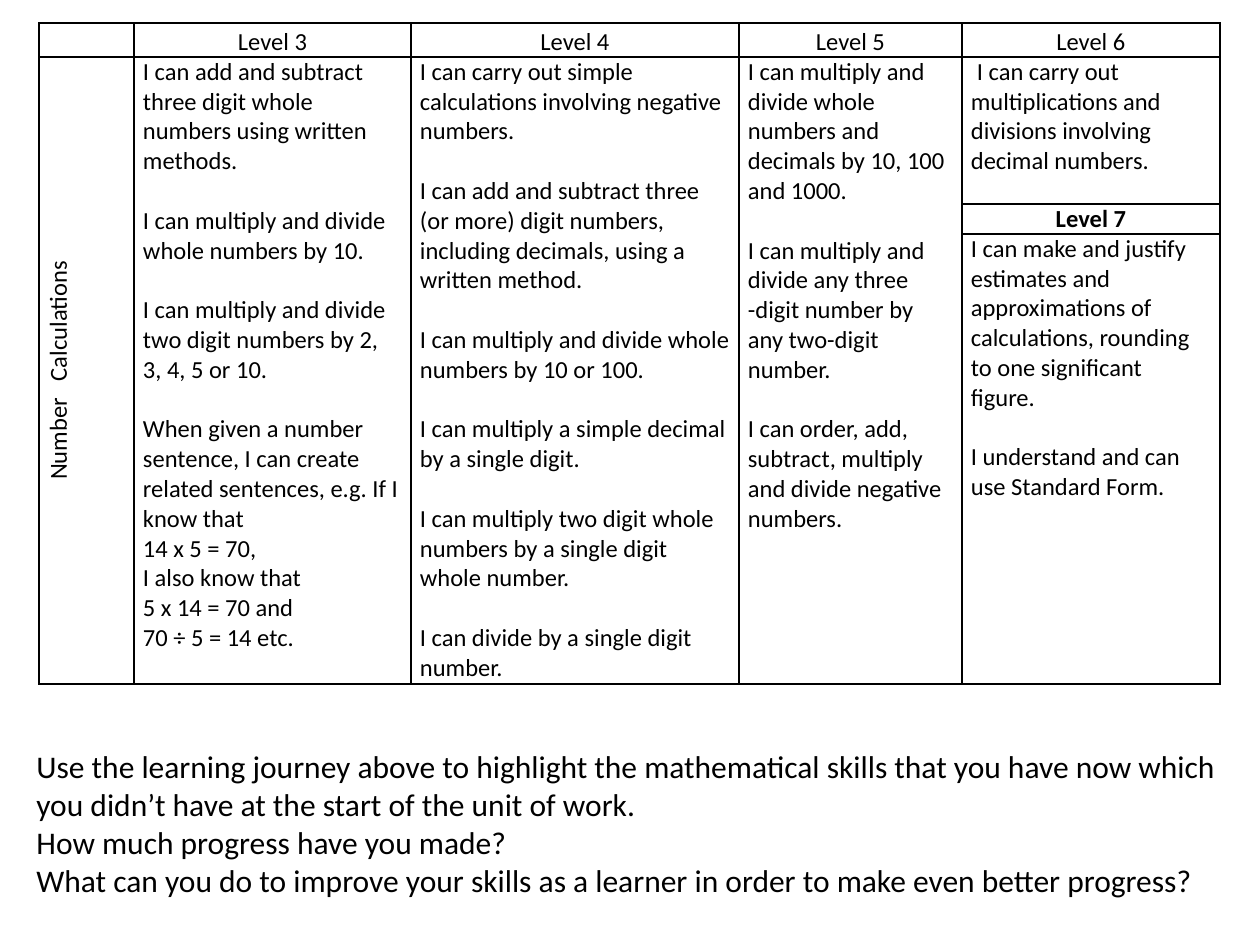
from lxml.etree import SubElement
from pptx import Presentation
from pptx.dml.color import RGBColor
from pptx.enum.text import MSO_AUTO_SIZE, PP_ALIGN
from pptx.oxml.ns import qn
from pptx.util import Emu, Pt

COLORS = {"ink": "000000"}
FONT = "Calibri"
COLS = [95, 277, 328, 223, 258]
ROWS = [34, 147, 30, 450]
LEVEL_3 = [
    ["I can add and subtract three digit whole numbers using written methods."],
    ["I can multiply and divide whole numbers by 10."],
    ["I can multiply and divide two digit numbers by 2, 3, 4, 5 or 10."],
    ["When given a number sentence, I can create related sentences, e.g. If I know that",
     "14 x 5 = 70,", "I also know that", "5 x 14 = 70 and", "70 ÷ 5 = 14 etc."],
]
LEVEL_4 = [
    ["I can carry out simple calculations involving negative numbers."],
    ["I can add and subtract three (or more) digit numbers, including decimals, "
     "using a written method."],
    ["I can multiply and divide whole numbers by 10 or 100."],
    ["I can multiply a simple decimal by a single digit."],
    ["I can multiply two digit whole numbers by a single digit whole number."],
    ["I can divide by a single digit number."],
]
LEVEL_5 = [
    ["I can multiply and divide whole numbers and decimals by 10, 100 and 1000."],
    ["I can multiply and divide any three -digit number by any two-digit number."],
    ["I can order, add, subtract, multiply and divide negative numbers."],
]
LEVEL_6 = [["I can carry out multiplications and divisions involving decimal numbers."]]
LEVEL_7 = [
    ["I can make and justify estimates and approximations of calculations, "
     "rounding to one significant figure."],
    ["I understand and can use Standard Form."],
]
PROMPTS = [
    "Use the learning journey above to highlight the mathematical skills that you have "
    "now which you didn’t have at the start of the unit of work.",
    "How much progress have you made?",
    "What can you do to improve your skills as a learner in order to make even better progress?",
]


def px(n):
    return Emu(round(n * 914400 / 126))


def add_run(p, text, size=14, bold=False):
    r = p.add_run()
    r.text = text
    r.font.name = FONT
    r.font.size = Pt(size)
    r.font.bold = bold
    r.font.color.rgb = RGBColor.from_string(COLORS["ink"])
    return r


def next_paragraph(tf, i):
    return tf.add_paragraph() if i else tf.paragraphs[0]


def format_cell(cell):
    cell.margin_left = cell.margin_right = px(9)
    cell.margin_top = cell.margin_bottom = 0
    tc_pr = cell._tc.get_or_add_tcPr()
    for side in ("lnL", "lnR", "lnT", "lnB"):
        ln = SubElement(tc_pr, qn(f"a:{side}"), w=str(Pt(1)))
        fill = SubElement(ln, qn("a:solidFill"))
        SubElement(fill, qn("a:srgbClr"), val=COLORS["ink"])
    cell.fill.background()
    SubElement(cell.text_frame.paragraphs[0]._p, qn("a:endParaRPr"), sz="1400")


def write_heading(cell, text, spacing=1.15, bold=False):
    p = cell.text_frame.paragraphs[0]
    p.alignment = PP_ALIGN.CENTER
    p.line_spacing = spacing
    add_run(p, text, bold=bold)


def write_side_heading(cell, first, second):
    write_heading(cell, first)
    p = cell.text_frame.paragraphs[0]
    gap = add_run(p, " ")
    gap.font._element.set("spc", "640")
    add_run(p, second)
    cell._tc.get_or_add_tcPr().set("vert", "vert270")


def write_skills(cell, groups):
    lines = [(line, i > 0 and j == 0)
             for i, group in enumerate(groups) for j, line in enumerate(group)]
    for i, (line, starts_group) in enumerate(lines):
        p = next_paragraph(cell.text_frame, i)
        if starts_group:
            p.space_before = Pt(17)
        add_run(p, line)


def add_levels_table(s):
    frame = s.shapes.add_table(len(ROWS), len(COLS), px(39), px(23),
                               px(sum(COLS)), px(sum(ROWS)))
    table = frame.table
    table.first_row = table.horz_banding = False
    for col, width in zip(table.columns, COLS):
        col.width = px(width)
    for row, height in zip(table.rows, ROWS):
        row.height = px(height)
    for cell in table.iter_cells():
        format_cell(cell)
    for c in range(4):
        table.cell(1, c).merge(table.cell(3, c))
    for c in range(1, 5):
        write_heading(table.cell(0, c), f"Level {c + 2}")
    write_side_heading(table.cell(1, 0), "Number", "Calculations")
    for c, groups in enumerate([LEVEL_3, LEVEL_4, LEVEL_5, LEVEL_6], 1):
        write_skills(table.cell(1, c), groups)
    p = table.cell(1, 4).text_frame.paragraphs[0]
    p._p.get_or_add_pPr().set("indent", str(px(6)))
    write_heading(table.cell(2, 4), "Level 7", spacing=1.0, bold=True)
    write_skills(table.cell(3, 4), LEVEL_7)


def add_prompts(s):
    tf = s.shapes.add_textbox(px(24), px(741), px(1230), px(204)).text_frame
    tf.word_wrap = True
    tf.auto_size = MSO_AUTO_SIZE.SHAPE_TO_FIT_TEXT
    for i, text in enumerate(PROMPTS):
        add_run(next_paragraph(tf, i), text, size=18)


def main():
    prs = Presentation()
    prs.slide_width, prs.slide_height = px(1260), px(945)
    s = prs.slides.add_slide(prs.slide_layouts[6])
    add_prompts(s)
    add_levels_table(s)
    prs.save("out.pptx")


if __name__ == "__main__":
    main()
